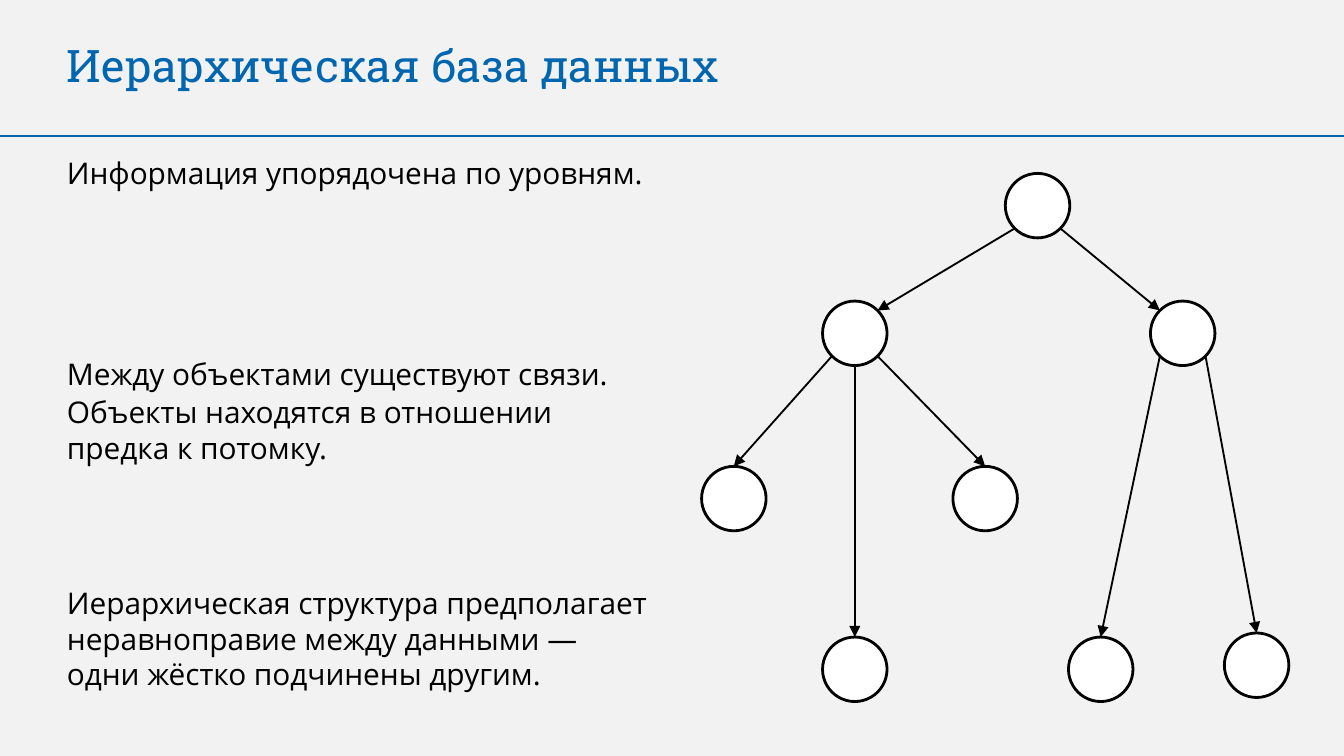
from math import cos, radians, sin

from lxml import etree
from pptx import Presentation
from pptx.dml.color import RGBColor
from pptx.enum.shapes import MSO_CONNECTOR, MSO_SHAPE
from pptx.enum.text import MSO_AUTO_SIZE
from pptx.oxml.ns import qn
from pptx.util import Inches, Pt

LINE = MSO_CONNECTOR.STRAIGHT
OVAL = MSO_SHAPE.OVAL
GROW = MSO_AUTO_SIZE.SHAPE_TO_FIT_TEXT

BLUE, BLACK, WHITE, GRAY = "0066B0", "000000", "FFFFFF", "F2F2F2"
WIDTH = 10
HEIGHT = WIDTH * 9 / 16
LEFT = 0.4
RADIUS = 0.24

# Text, top, height
NOTES = [
    ("Информация упорядочена по уровням.", 1.1, 0.37),
    ("Между объектами существуют связи.", 2.6, 0.37),
    ("Объекты находятся в отношении предка к потомку.", 2.88, 0.64),
    ("Иерархическая структура предполагает неравноправие между данными — "
     "одни жёстко подчинены другим.", 4.3, 0.91),
]

# Node centres
NODES = {
    "root": (7.72, 1.53),
    "left": (6.36, 2.48),
    "right": (8.8, 2.48),
    "leaf1": (5.46, 3.71),
    "leaf2": (6.36, 4.98),
    "leaf3": (7.33, 3.71),
    "leaf4": (8.19, 4.98),
    "leaf5": (9.35, 4.95),
}

# Port angles, clockwise from the right
LOW_RIGHT, LOW, LOW_LEFT, UP_LEFT, UP, UP_RIGHT = 45, 90, 135, 225, 270, 315

# Parent, its port, child, its port
EDGES = [
    ("root", LOW_LEFT, "left", UP_RIGHT),
    ("root", LOW_RIGHT, "right", UP_LEFT),
    ("left", LOW_LEFT, "leaf1", UP),
    ("left", LOW_RIGHT, "leaf3", UP),
    ("left", LOW, "leaf2", UP),
    ("right", LOW_LEFT, "leaf4", UP),
    ("right", LOW_RIGHT, "leaf5", UP),
]


def color(code):
    return RGBColor.from_string(code)


def add_text(slide, text, top, width, height, font, size, code):
    box = slide.shapes.add_textbox(
        Inches(LEFT), Inches(top), Inches(width), Inches(height))
    frame = box.text_frame
    frame.word_wrap = True
    frame.auto_size = GROW
    para = frame.paragraphs[0]
    para.text = text
    para.font.name = font
    para.font.size = Pt(size)
    para.font.color.rgb = color(code)


def add_line(slide, start, end, code):
    line = slide.shapes.add_connector(
        LINE, *(Inches(value) for value in (*start, *end)))
    line.line.color.rgb = color(code)
    line.line.width = Pt(1)
    etree.SubElement(line._element.spPr, qn("a:effectLst"))
    return line


def add_arrow(slide, start, end):
    arrow = add_line(slide, start, end, BLACK)
    stroke = arrow._element.spPr.find(qn("a:ln"))
    etree.SubElement(stroke, qn("a:tailEnd"), type="triangle")


def add_node(slide, x, y):
    node = slide.shapes.add_shape(
        OVAL, Inches(x - RADIUS), Inches(y - RADIUS),
        Inches(2 * RADIUS), Inches(2 * RADIUS))
    node.shadow.inherit = False
    node.fill.solid()
    node.fill.fore_color.rgb = color(WHITE)
    node.line.color.rgb = color(BLACK)
    node.line.width = Pt(1.5)


def port(name, angle):
    """Point on the rim of a node at the given angle."""
    x, y = NODES[name]
    turn = radians(angle)
    return x + RADIUS * cos(turn), y + RADIUS * sin(turn)


def main():
    deck = Presentation()
    deck.slide_width = Inches(WIDTH)
    deck.slide_height = Inches(HEIGHT)
    slide = deck.slides.add_slide(deck.slide_layouts[6])
    back = slide.background.fill
    back.solid()
    back.fore_color.rgb = color(GRAY)

    add_text(slide, "Иерархическая база данных", 0.23, 5.14, 0.5,
             "Roboto Slab", 24, BLUE)
    add_line(slide, (0, 1.01), (WIDTH, 1.01), BLUE)
    for text, top, height in NOTES:
        add_text(slide, text, top, 4.57, height, "Open Sans", 16, BLACK)

    for x, y in NODES.values():
        add_node(slide, x, y)
    for parent, out, child, into in EDGES:
        add_arrow(slide, port(parent, out), port(child, into))

    deck.save("out.pptx")


if __name__ == "__main__":
    main()
